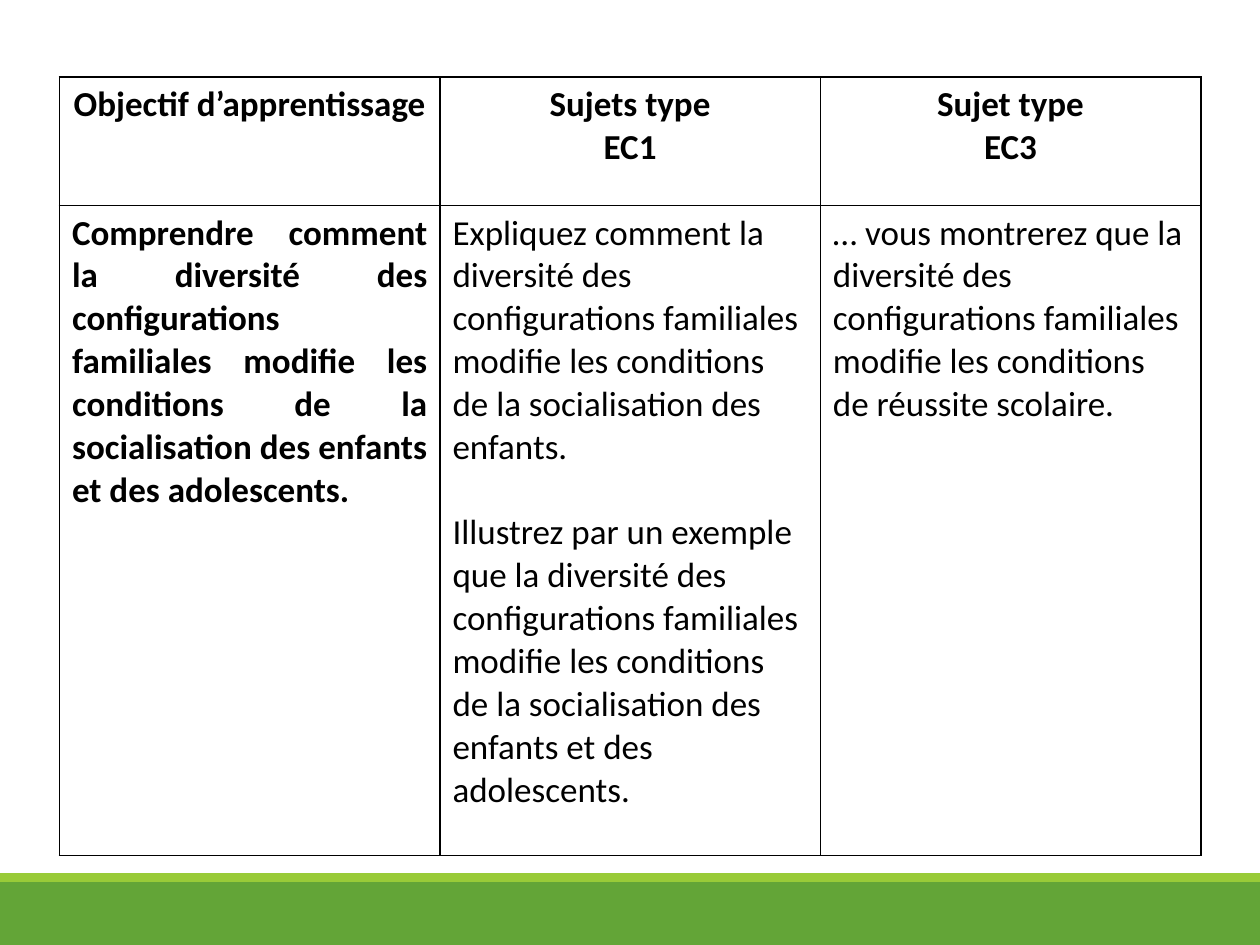
from dataclasses import dataclass

from lxml import etree
from pptx import Presentation
from pptx.dml.color import RGBColor
from pptx.enum.shapes import MSO_SHAPE
from pptx.enum.text import PP_ALIGN
from pptx.oxml.ns import qn
from pptx.util import Pt

RECTANGLE = MSO_SHAPE.RECTANGLE
LEFT, CENTER, JUSTIFY = PP_ALIGN.LEFT, PP_ALIGN.CENTER, PP_ALIGN.JUSTIFY

SLIDE_WIDTH, SLIDE_HEIGHT = 720, 540
BAND_TOP, STRIPE_HEIGHT = 504, 5
TABLE_LEFT, TABLE_TOP = 34, 44
COLUMN_WIDTH = 217.4
ROW_HEIGHTS = (73.4, 371.5)

HEADERS = (
    ("Objectif d’apprentissage",),
    ("Sujets type", "EC1"),
    ("Sujet type", "EC3"),
)
OBJECTIVE = (
    "Comprendre comment la diversité des configurations familiales modifie "
    "les conditions de la socialisation des enfants et des adolescents.",
)
EC1_SUBJECTS = (
    "Expliquez comment la diversité des configurations familiales modifie "
    "les conditions de la socialisation des enfants.",
    "Illustrez par un exemple que la diversité des configurations familiales "
    "modifie les conditions de la socialisation des enfants et des adolescents.",
)
EC3_SUBJECT = (
    "… vous montrerez que la diversité des configurations familiales modifie "
    "les conditions de réussite scolaire.",
)


@dataclass(frozen=True)
class Theme:
    font: str = "Calibri"
    text_size: float = 20
    paragraph_gap: float = 24.4
    border_width: float = 1
    text: str = "000000"
    border: str = "000000"
    paper: str = "FFFFFF"
    band: str = "63A537"
    stripe: str = "99CB38"


def write_text(frame, paragraphs, theme, bold=False, align=LEFT, gap=0):
    frame.word_wrap = True
    for index, text in enumerate(paragraphs):
        paragraph = frame.paragraphs[0] if index == 0 else frame.add_paragraph()
        paragraph.alignment = align
        paragraph.space_before = Pt(gap if index else 0)
        run = paragraph.add_run()
        run.text = text
        run.font.name = theme.font
        run.font.size = Pt(theme.text_size)
        run.font.bold = bold
        run.font.color.rgb = RGBColor.from_string(theme.text)


class SlideBuilder:
    def __init__(self, slide, theme):
        self.slide = slide
        self.theme = theme

    def background(self):
        fill = self.slide.background.fill
        fill.solid()
        fill.fore_color.rgb = RGBColor.from_string(self.theme.paper)

    def band(self, top, height, color):
        shape = self.slide.shapes.add_shape(
            RECTANGLE, Pt(0), Pt(top), Pt(SLIDE_WIDTH), Pt(height))
        shape.shadow.inherit = False
        shape.fill.solid()
        shape.fill.fore_color.rgb = RGBColor.from_string(color)
        shape.line.fill.background()

    def table(self, left, top, column_widths, row_heights):
        table = self.slide.shapes.add_table(
            len(row_heights), len(column_widths), Pt(left), Pt(top),
            Pt(sum(column_widths)), Pt(sum(row_heights))).table
        table.first_row = False
        table.horz_banding = False
        for column, width in zip(table.columns, column_widths):
            column.width = Pt(width)
        for row, height in zip(table.rows, row_heights):
            row.height = Pt(height)
        return table

    def cell(self, cell, paragraphs, **text_format):
        properties = cell._tc.get_or_add_tcPr()
        for side in ("a:lnL", "a:lnR", "a:lnT", "a:lnB"):
            border = etree.SubElement(
                properties, qn(side), w=str(Pt(self.theme.border_width)))
            fill = etree.SubElement(border, qn("a:solidFill"))
            etree.SubElement(fill, qn("a:srgbClr"), val=self.theme.border)
        cell.fill.solid()
        cell.fill.fore_color.rgb = RGBColor.from_string(self.theme.paper)
        write_text(cell.text_frame, paragraphs, self.theme, **text_format)


def main():
    presentation = Presentation()
    presentation.slide_width = Pt(SLIDE_WIDTH)
    presentation.slide_height = Pt(SLIDE_HEIGHT)
    theme = Theme()
    slide = presentation.slides.add_slide(presentation.slide_layouts[6])
    builder = SlideBuilder(slide, theme)

    builder.background()
    builder.band(BAND_TOP, SLIDE_HEIGHT - BAND_TOP, theme.band)
    builder.band(BAND_TOP - STRIPE_HEIGHT, STRIPE_HEIGHT, theme.stripe)

    table = builder.table(
        TABLE_LEFT, TABLE_TOP, [COLUMN_WIDTH] * len(HEADERS), ROW_HEIGHTS)
    for column, header in enumerate(HEADERS):
        builder.cell(table.cell(0, column), header, bold=True, align=CENTER)
    builder.cell(table.cell(1, 0), OBJECTIVE, bold=True, align=JUSTIFY)
    builder.cell(table.cell(1, 1), EC1_SUBJECTS, gap=theme.paragraph_gap)
    builder.cell(table.cell(1, 2), EC3_SUBJECT)

    presentation.save("out.pptx")


if __name__ == "__main__":
    main()
